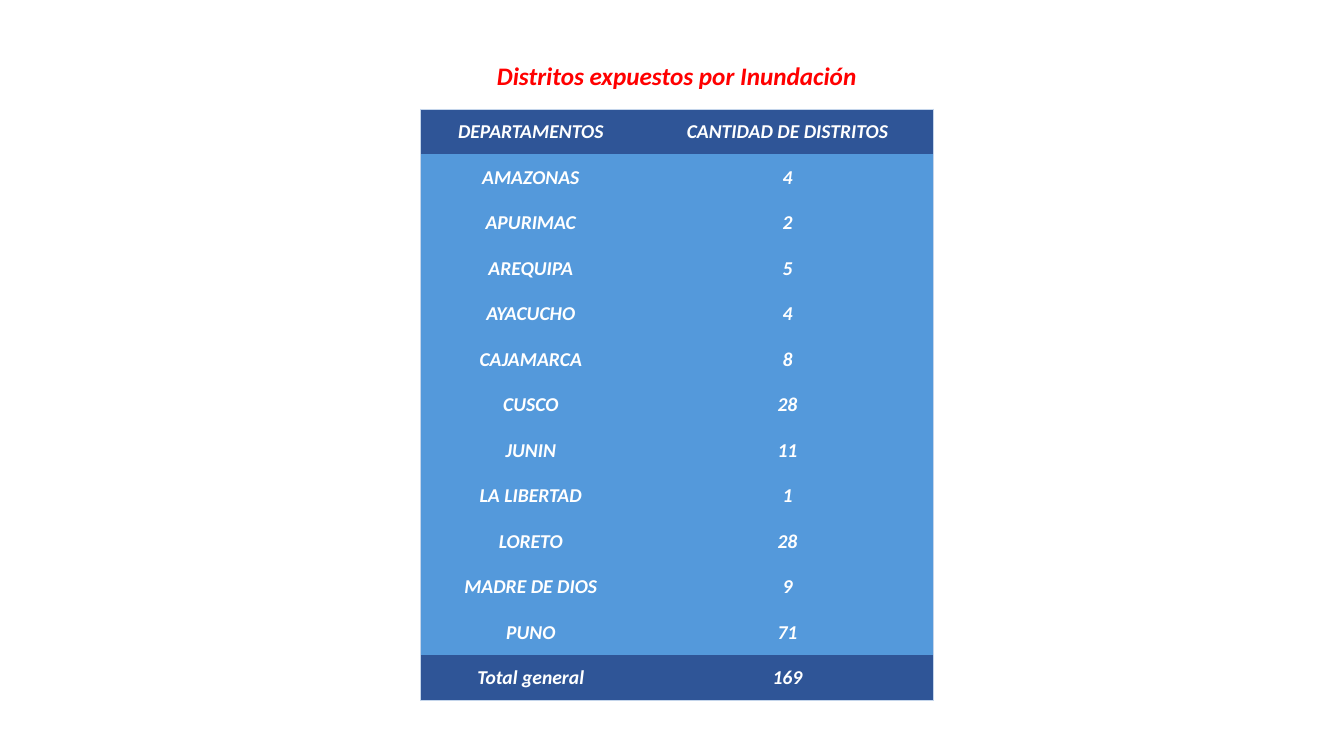
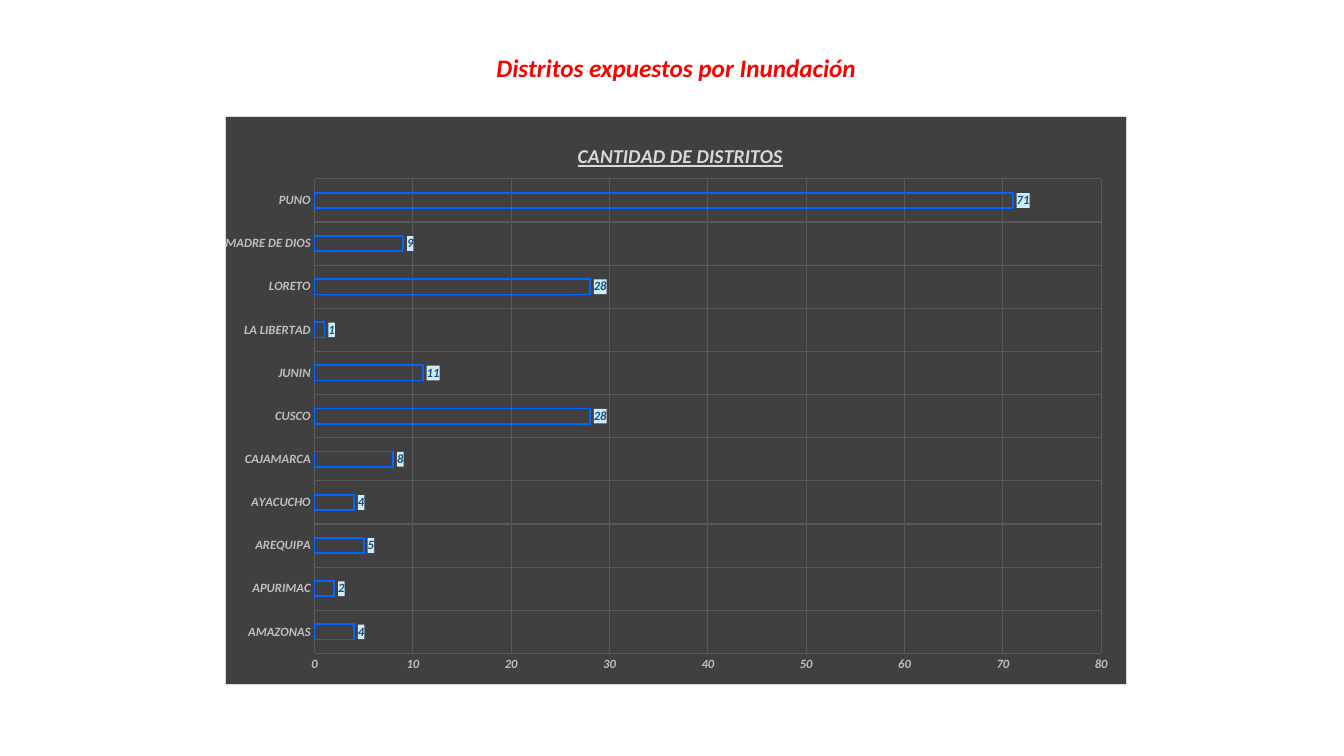
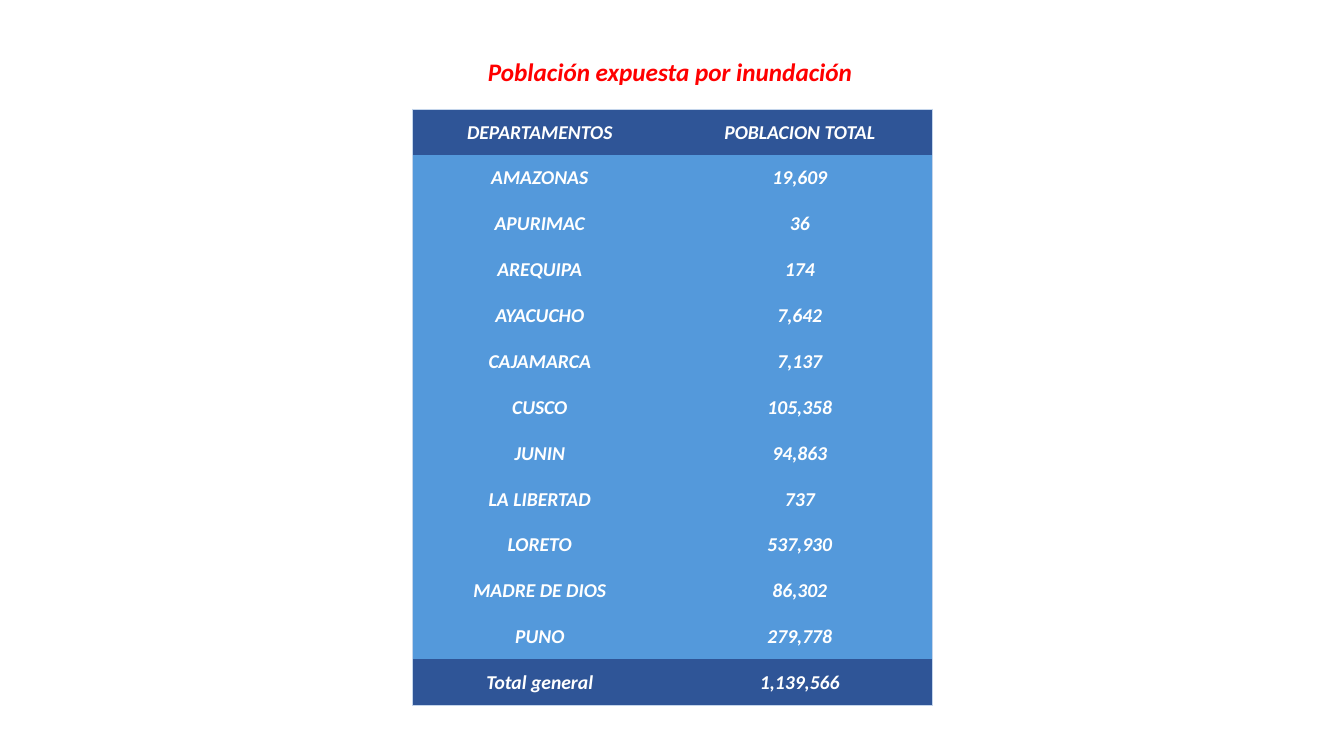
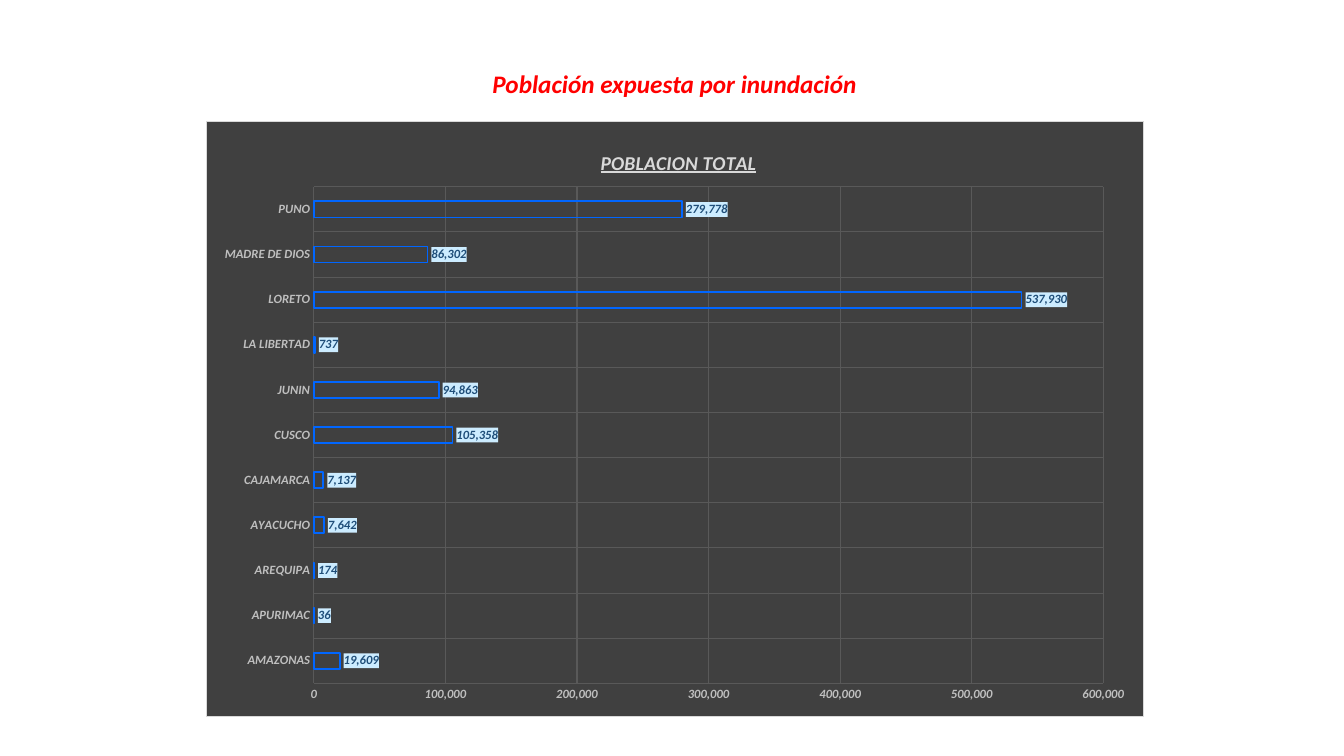
import dataclasses

import pptx
import pptx.chart.data
import pptx.dml.color
import pptx.enum.chart
import pptx.enum.text
import pptx.oxml
import pptx.oxml.ns
import pptx.util


@dataclasses.dataclass(frozen=True)
class Theme:
    """Hold the colours, type sizes and measures that the slides share."""
    font: str = "Calibri"
    red: str = "FF0000"
    white: str = "FFFFFF"
    navy: str = "2F5597"
    blue: str = "5499DB"
    edge: str = "C4D5EB"
    dark: str = "404040"
    grid: str = "595959"
    pale: str = "D9D9D9"
    grey: str = "BFBFBF"
    bar: str = "0066FF"
    ink: str = "1F4E79"
    tint: str = "CCECFF"
    head: int = 18
    body: int = 14
    tick: int = 9
    wide: float = 13.33
    high: float = 7.5


THEME = Theme()
NO_GRID = "{2D5ABB26-0587-4C30-8999-92F81FD0307C}"
AREAS = ("AMAZONAS", "APURIMAC", "AREQUIPA", "AYACUCHO", "CAJAMARCA", "CUSCO",
         "JUNIN", "LA LIBERTAD", "LORETO", "MADRE DE DIOS", "PUNO")
COUNTS = (4, 2, 5, 4, 8, 28, 11, 1, 28, 9, 71)
PEOPLE = (19609, 36, 174, 7642, 7137, 105358, 94863, 737, 537930, 86302, 279778)


def rgb(code):
    """Turn a hex code into a colour."""
    return pptx.dml.color.RGBColor.from_string(code)


def box(left, top, wide, high):
    """Turn percentages of the slide into left, top, width and height."""
    return [pptx.util.Inches(part * side / 100) for part, side in
            zip((left, top, wide, high), (THEME.wide, THEME.high) * 2)]


def style(font, size, color):
    """Give a font the bold italic look of the deck."""
    font.name = THEME.font
    font.size = pptx.util.Pt(size)
    font.bold = font.italic = True
    font.color.rgb = rgb(color)


def write(frame, text, size, color):
    """Put one centred line of text into a frame."""
    frame.text = text
    line = frame.paragraphs[0]
    line.alignment = pptx.enum.text.PP_ALIGN.CENTER
    style(line.runs[0].font, size, color)


def node(tag, inner, attrs=""):
    """Build an XML element from its tag, content and attributes."""
    names = pptx.oxml.ns.nsdecls("a", "c")
    return pptx.oxml.parse_xml(f"<{tag} {names} {attrs}>{inner}</{tag}>")


def paint(color):
    """Return the XML of a solid fill."""
    return f'<a:solidFill><a:srgbClr val="{color}"/></a:solidFill>'


def start(deck, text, mid, top):
    """Add a slide with its title centred on the given percentage."""
    slide = deck.slides.add_slide(deck.slide_layouts[5])
    title = slide.shapes.title
    wide = 28.8
    title.left, title.top, title.width, title.height = box(mid - wide / 2, top, wide, 5.33)
    frame = title.text_frame
    write(frame, text, THEME.head, THEME.red)
    frame.word_wrap = False
    frame.auto_size = pptx.enum.text.MSO_AUTO_SIZE.NONE
    frame.vertical_anchor = pptx.enum.text.MSO_ANCHOR.MIDDLE
    return slide


def rim(cell, sides):
    """Draw thin borders on the given sides of a cell."""
    props = cell._tc.get_or_add_tcPr()
    for place, side in enumerate(sides):
        props.insert(place, node(f"a:ln{side}", paint(THEME.edge), 'w="6350"'))


def fill(cell, text, color):
    """Write and colour one table cell."""
    write(cell.text_frame, text, THEME.body, THEME.white)
    cell.vertical_anchor = pptx.enum.text.MSO_ANCHOR.MIDDLE
    cell.margin_left = cell.margin_right = cell.margin_top = pptx.util.Inches(0.01)
    cell.margin_bottom = 0
    cell.fill.solid()
    cell.fill.fore_color.rgb = rgb(color)


def table(slide, area, share, label, values, total):
    """Add a table of areas with a heading row and a total row."""
    rows = [("DEPARTAMENTOS", label), *zip(AREAS, values), ("Total general", total)]
    last = len(rows) - 1
    place = box(*area)
    grid = slide.shapes.add_table(len(rows), 2, *place).table
    grid._tbl.tblPr.find(pptx.oxml.ns.qn("a:tableStyleId")).text = NO_GRID
    grid.horz_banding = False
    for col, part in zip(grid.columns, (share, 1 - share)):
        col.width = int(place[2] * part)
    for row, pair in enumerate(rows):
        grid.rows[row].height = place[3] // len(rows)
        ends = {0: "T", last: "B"}.get(row, "")
        for col, item in enumerate(pair):
            cell = grid.cell(row, col)
            text = item if isinstance(item, str) else f"{item:,}"
            fill(cell, text, THEME.navy if ends else THEME.blue)
            rim(cell, "LR"[col] + ends)


def lay(owner, index, inner, **parts):
    """Fix the place of a chart part by shares of the chart."""
    old = owner.find(pptx.oxml.ns.qn("c:layout"))
    if old is not None:
        owner.remove(old)
    spots = "".join(f'<c:{key} val="{part}"/>' for key, part in parts.items())
    target = '<c:layoutTarget val="inner"/>' if inner else ""
    modes = '<c:xMode val="edge"/><c:yMode val="edge"/>'
    owner.insert(index, node("c:layout", f"<c:manualLayout>{target}{modes}{spots}</c:manualLayout>"))


def rule(axis):
    """Style an axis with grey labels and thin gridlines."""
    style(axis.tick_labels.font, THEME.tick, THEME.grey)
    axis.major_tick_mark = axis.minor_tick_mark = pptx.enum.chart.XL_TICK_MARK.NONE
    axis.format.line.fill.background()
    axis.has_major_gridlines = True
    line = axis.major_gridlines.format.line
    line.width = pptx.util.Pt(0.75)
    line.color.rgb = rgb(THEME.grid)


def tag(plot):
    """Show tinted value labels beyond the bars."""
    plot.has_data_labels = True
    labels = plot.data_labels
    labels.show_value = True
    labels.number_format = "#,##0"
    labels.number_format_is_linked = False
    labels.position = pptx.enum.chart.XL_LABEL_POSITION.OUTSIDE_END
    style(labels.font, THEME.tick, THEME.ink)
    text = labels._element.find(pptx.oxml.ns.qn("c:txPr"))
    text.addprevious(node("c:spPr", paint(THEME.tint)))


def bars(slide, area, label, values, top, step, name_x, plot_x, plot_w):
    """Add a dark bar chart of the areas."""
    data = pptx.chart.data.CategoryChartData()
    data.categories = AREAS
    data.add_series(label, values)
    kind = pptx.enum.chart.XL_CHART_TYPE.BAR_CLUSTERED
    chart = slide.shapes.add_chart(kind, *box(*area), data).chart
    chart.has_legend = False
    chart.font.name = THEME.font
    chart.font.size = pptx.util.Pt(10)
    edge = f'<a:ln w="9525">{paint(THEME.pale)}</a:ln>'
    text = chart._chartSpace.find(pptx.oxml.ns.qn("c:txPr"))
    text.addprevious(node("c:spPr", paint(THEME.dark) + edge))

    chart.has_title = True
    write(chart.chart_title.text_frame, label, THEME.body, THEME.pale)
    chart.chart_title.text_frame.paragraphs[0].runs[0].font.underline = True
    lay(chart.chart_title._element, 1, False, x=name_x, y=0.04)
    lay(chart._chartSpace.chart.plotArea, 0, True, x=plot_x, y=0.11, w=plot_w, h=0.835)

    rule(chart.category_axis)
    axis = chart.value_axis
    rule(axis)
    axis.minimum_scale, axis.maximum_scale, axis.major_unit = 0, top, step
    axis.tick_labels.number_format = "#,##0"
    axis.tick_labels.number_format_is_linked = False

    plot = chart.plots[0]
    plot.vary_by_categories = False
    plot.gap_width, plot.overlap = 182, -50
    look = plot.series[0].format
    look.fill.background()
    look.line.width = pptx.util.Pt(1.25)
    look.line.color.rgb = rgb(THEME.bar)
    tag(plot)


def main():
    """Build the four slides and save them."""
    deck = pptx.Presentation()
    deck.slide_width = pptx.util.Inches(THEME.wide)
    deck.slide_height = pptx.util.Inches(THEME.high)
    flood, crowd = "Distritos expuestos por Inundación", "Población expuesta por inundación"
    count, people = "CANTIDAD DE DISTRITOS", "POBLACION TOTAL"

    slide = start(deck, flood, 50.36, 7.33)
    table(slide, (31.28, 14.4, 38.2, 78.27), 0.43, count, COUNTS, 169)

    slide = start(deck, flood, 50.32, 6.27)
    bars(slide, (16.73, 15.33, 67.13, 75.33), count, COUNTS, 80, 10, 0.387, 0.099, 0.873)

    slide = start(deck, crowd, 49.86, 6.8)
    table(slide, (30.68, 14.4, 38.7, 78.93), 0.49, people, PEOPLE, 1139566)

    slide = start(deck, crowd, 50.2, 8.4)
    bars(slide, (15.3, 16, 69.83, 78.8), people, PEOPLE, 600000, 100000, 0.417, 0.115, 0.842)

    deck.save("out.pptx")


if __name__ == "__main__":
    main()
